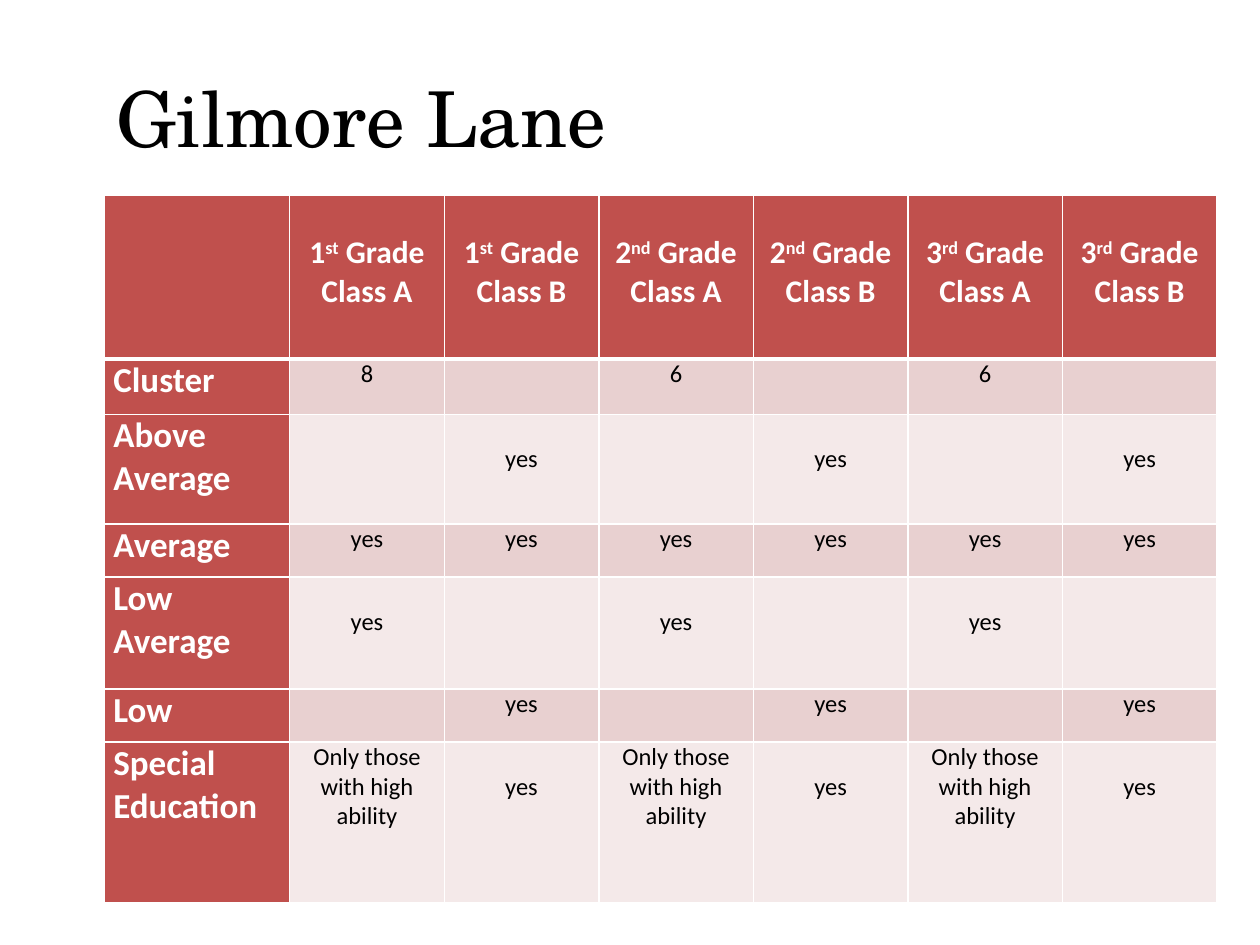
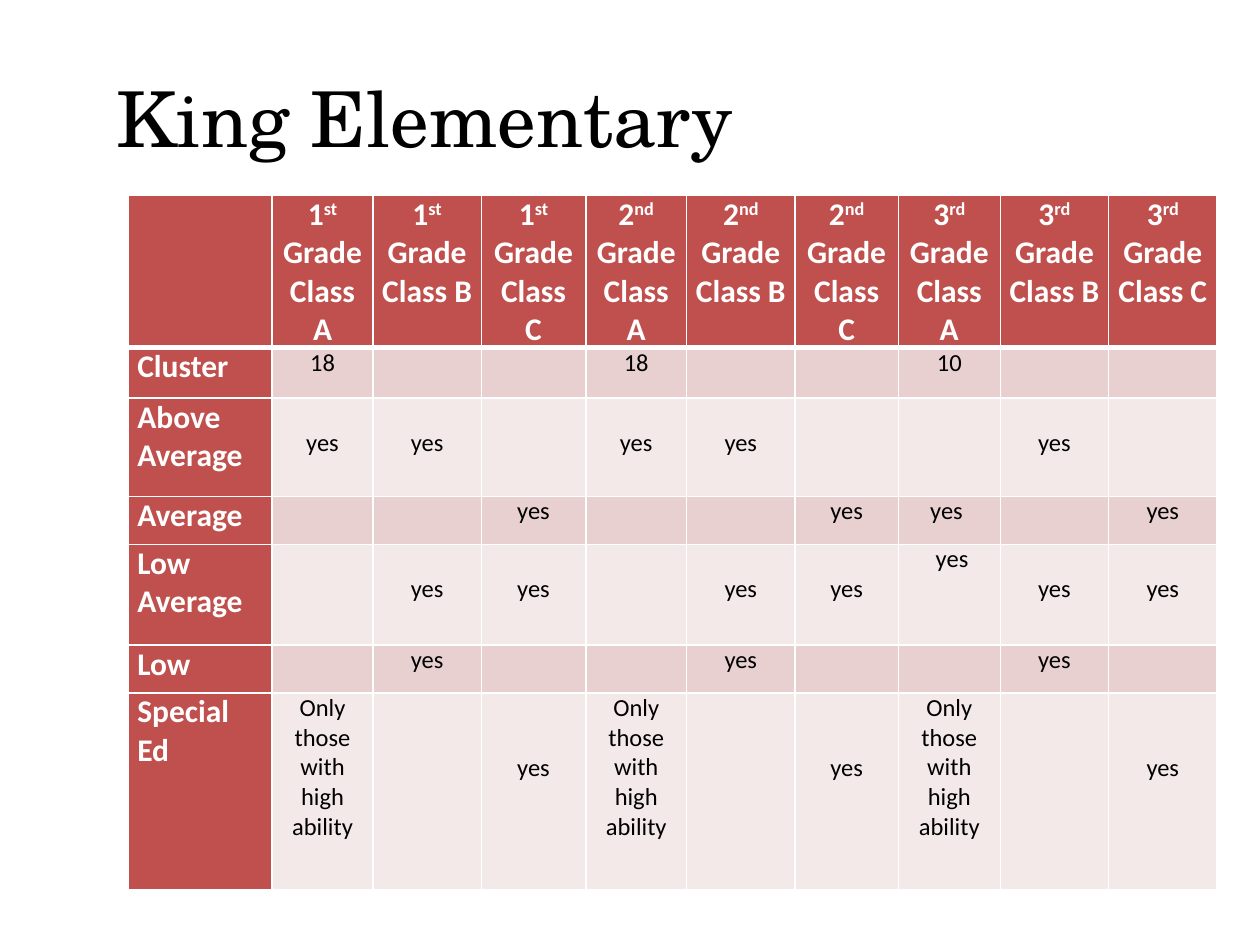
from dataclasses import dataclass

from lxml import etree
from pptx import Presentation
from pptx.dml.color import RGBColor
from pptx.enum.text import MSO_ANCHOR, PP_ALIGN
from pptx.oxml.ns import qn
from pptx.util import Inches, Pt

LEFT, CENTER = PP_ALIGN.LEFT, PP_ALIGN.CENTER
MIDDLE = MSO_ANCHOR.MIDDLE
LINE_SPACING = 1.22


@dataclass(frozen=True)
class Theme:
    """Colours, fonts and type sizes shared by the slides."""
    text: str = "000000"
    white: str = "FFFFFF"
    accent: str = "C0504D"
    bands: tuple = ("E8D0D0", "F4E9E9")
    title_font: str = "TeX Gyre Schola"
    table_font: str = "Calibri"
    title_size: int = 44
    header_size: int = 18
    body_size: int = 14
    rule: int = 1
    header_rule: int = 3


THEME = Theme()
TITLE_BOX = (0.83, 0.3, 8.83, 1.25)
YES = "yes"
ABLE = "Only those with high ability"

GILMORE = {
    "title": "Gilmore Lane",
    "at": (0.83, 1.55),
    "cols": [1.47] + [(8.83 - 1.47) / 6] * 6,
    "heights": [1.3, 0.44, 0.87, 0.42, 0.89, 0.42, 1.28],
    "label_size": 20,
    "header_drop": 1,
    "header": ["1st Grade\nClass A", "1st Grade\nClass B",
               "2nd Grade\nClass A", "2nd Grade\nClass B",
               "3rd Grade\nClass A", "3rd Grade Class B"],
    "rows": [
        ("Cluster", 0, ["8", "", "6", "", "6", ""]),
        ("Above Average", 1, ["", YES] * 3),
        ("Average", 0, [YES] * 6),
        ("Low Average", 1, [YES, ""] * 3),
        ("Low", 0, ["", YES] * 3),
        ("Special Education", 1, [ABLE, YES] * 3),
    ],
}

KING = {
    "title": "King Elementary",
    "at": (1.02, 1.55),
    "cols": [1.14, 0.8, 0.86, 0.83, 0.8, 0.86, 0.82, 0.81, 0.86, 0.86],
    "heights": [1.21, 0.4, 0.78, 0.38, 0.8, 0.38, 1.56],
    "label_size": 18,
    "header_drop": 0,
    "header": ["1st Grade\nClass A", "1st Grade\nClass B", "1st Grade\nClass C",
               "2nd Grade\nClass A", "2nd Grade\nClass B", "2nd Grade\nClass C",
               "3rd Grade\nClass A", "3rd Grade Class B", "3rd Grade\nClass C"],
    "rows": [
        ("Cluster", 0, ["18", "", "", "18", "", "", "10", "", ""]),
        ("Above Average", 1, [YES, YES, ""] * 2 + ["", YES, ""]),
        ("Average", 0, ["", "", YES] * 2 + ["yes ", "", YES]),
        ("Low Average", 1, ["", YES, YES] * 2 + [" yes", YES, YES]),
        ("Low", 0, ["", YES, ""] * 3),
        ("Special Ed", 2, [ABLE, "", YES] * 3),
    ],
}


def add_run(p, text, color, **font):
    """Append a run with the given colour and font values."""
    r = p.add_run()
    r.text = text
    r.font.color.rgb = RGBColor.from_string(color)
    for name, value in font.items():
        setattr(r.font, name, value)
    return r


def add_title(s, text, box):
    """Place the slide title in its box."""
    tf = s.shapes.add_textbox(*map(Inches, box)).text_frame
    tf.word_wrap = True
    tf.vertical_anchor = MIDDLE
    add_run(tf.paragraphs[0], text, THEME.text,
            name=THEME.title_font, size=Pt(THEME.title_size))


def set_borders(cell, top, bottom):
    """Draw white rules on the four sides of a cell."""
    tc_pr = cell._tc.get_or_add_tcPr()
    sides = {"a:lnL": THEME.rule, "a:lnR": THEME.rule, "a:lnT": top, "a:lnB": bottom}
    for i, (tag, width) in enumerate(sides.items()):
        ln = etree.Element(qn(tag), w=str(Pt(width)))
        fill = etree.SubElement(ln, qn("a:solidFill"))
        etree.SubElement(fill, qn("a:srgbClr"), val=THEME.white)
        tc_pr.insert(i, ln)


def style_cell(cell, fill, drop, size):
    """Set the fill and margins, lowering the text by a number of lines."""
    margins = {"margin_left": Inches(0.07), "margin_right": Inches(0.07),
               "margin_top": Pt(drop * size * LINE_SPACING), "margin_bottom": 0}
    for name, value in margins.items():
        setattr(cell, name, value)
    cell.fill.solid()
    cell.fill.fore_color.rgb = RGBColor.from_string(fill)


def fill_header(cell, text, drop):
    """Write a class heading with a raised ordinal ending."""
    style_cell(cell, THEME.accent, drop, THEME.header_size)
    font = {"name": THEME.table_font, "size": Pt(THEME.header_size), "bold": True}
    tf = cell.text_frame
    for i, line in enumerate(text.splitlines()):
        p = tf.add_paragraph() if i else tf.paragraphs[0]
        p.alignment = CENTER
        if i:
            add_run(p, line, THEME.white, **font)
            continue
        add_run(p, line[0], THEME.white, **font)
        r = add_run(p, line[1:3], THEME.white, **font)
        r.font._element.set("baseline", "30000")
        add_run(p, line[3:], THEME.white, **font)


def fill_cell(cell, text, fill, color, size, align, bold=False, drop=0):
    """Write a row label or a table value."""
    style_cell(cell, fill, drop, size)
    if text:
        p = cell.text_frame.paragraphs[0]
        p.alignment = align
        add_run(p, text, color, name=THEME.table_font, size=Pt(size), bold=bold)


def add_class_table(s, school):
    """Build the table that assigns ability groups to classes."""
    cols, heights = school["cols"], school["heights"]
    box = (*school["at"], sum(cols), sum(heights))
    table = s.shapes.add_table(len(heights), len(cols), *map(Inches, box)).table
    table.first_row = table.horz_banding = False
    for col, width in zip(table.columns, cols):
        col.width = Inches(width)
    for row, height in zip(table.rows, heights):
        row.height = Inches(height)

    for j, text in enumerate(["", *school["header"]]):
        fill_header(table.cell(0, j), text, school["header_drop"])
    for i, (label, drop, values) in enumerate(school["rows"], 1):
        fill_cell(table.cell(i, 0), label, THEME.accent, THEME.white,
                  school["label_size"], LEFT, bold=True)
        for j, value in enumerate(values, 1):
            fill_cell(table.cell(i, j), value, THEME.bands[(i - 1) % 2], THEME.text,
                      THEME.body_size, CENTER, drop=drop if value == YES else 0)
    for i in range(len(heights)):
        for j in range(len(cols)):
            set_borders(table.cell(i, j),
                        top=THEME.header_rule if i == 1 else THEME.rule,
                        bottom=THEME.header_rule if i == 0 else THEME.rule)


def add_school_slide(prs, school):
    """Add one school's slide with its title and class table."""
    s = prs.slides.add_slide(prs.slide_layouts[6])
    add_title(s, school["title"], TITLE_BOX)
    add_class_table(s, school)


def main():
    """Build and save the presentation."""
    prs = Presentation()
    prs.slide_width, prs.slide_height = Inches(10), Inches(7.5)
    for school in (GILMORE, KING):
        add_school_slide(prs, school)
    prs.save("out.pptx")


if __name__ == "__main__":
    main()
